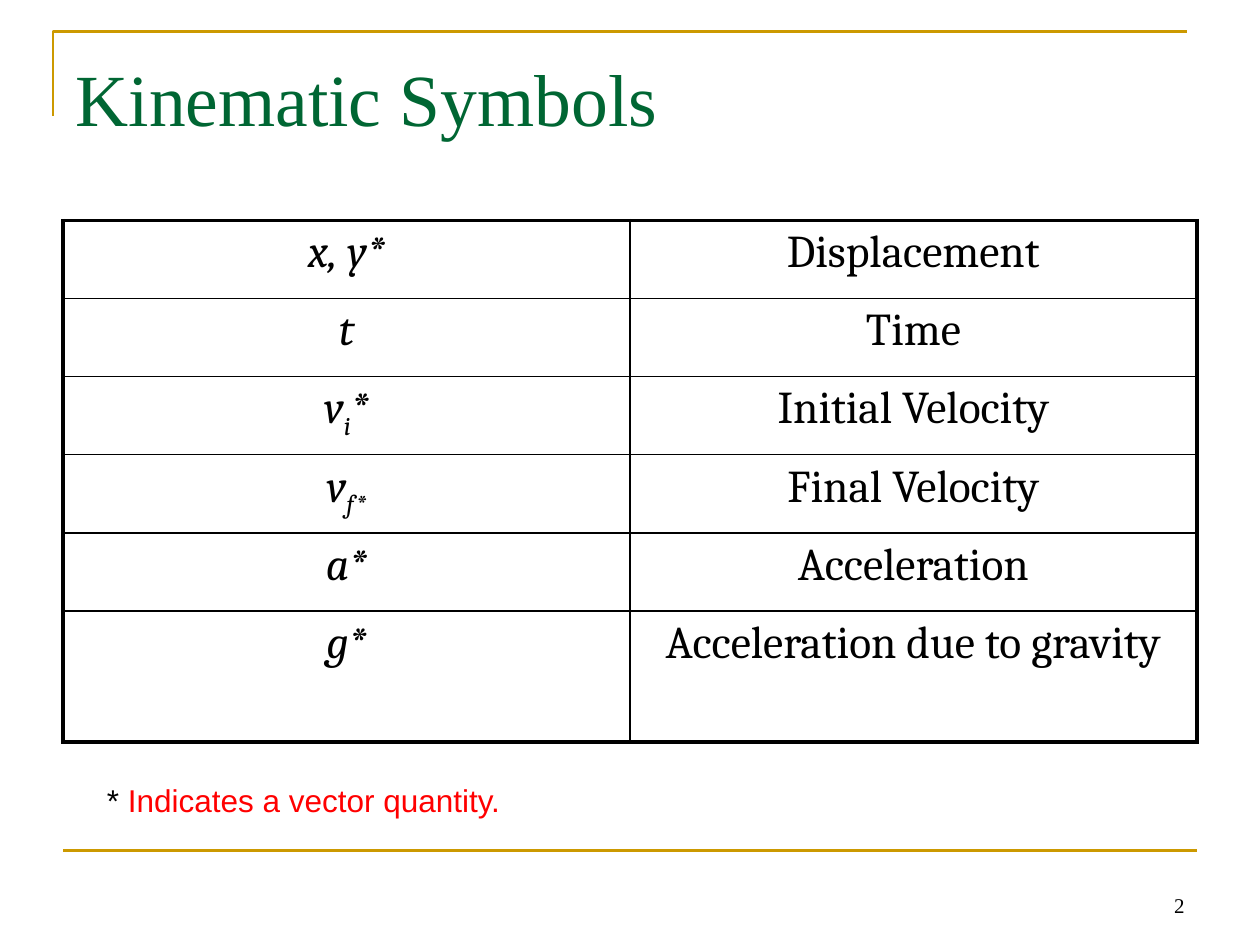
"""Build the slide of kinematic symbols."""
from dataclasses import dataclass

import pptx
import pptx.chart.data
import pptx.dml.color
import pptx.enum.shapes
import pptx.enum.text
import pptx.oxml
import pptx.oxml.ns
import pptx.util

Inches = pptx.util.Inches
Pt = pptx.util.Pt
Align = pptx.enum.text.PP_ALIGN
Anchor = pptx.enum.text.MSO_ANCHOR


@dataclass(frozen=True)
class Theme:
    """Colours, fonts and type sizes."""
    gold: str = "CC9900"
    green: str = "006633"
    black: str = "000000"
    red: str = "FF0000"
    serif: str = "Times New Roman"
    sans: str = "Arial"
    math: str = "Cambria"
    title: float = 42
    cell: float = 26
    note: float = 18
    page: float = 12
    rule: float = 1.5
    thin: float = 1
    thick: float = 2.25


@dataclass(frozen=True)
class Part:
    """A run of text with its look."""
    text: str
    font: str
    size: float
    color: str
    slant: bool = False
    base: int = 0


@dataclass(frozen=True)
class Entry:
    """A symbol, given as text and baseline pairs, and its meaning."""
    marks: tuple[tuple[str, int], ...]
    name: str
    height: float = 0.62


THEME = Theme()
ROWS = (
    Entry((("x, y*", 0),), "Displacement"),
    Entry((("t", 0),), "Time"),
    Entry((("v", 0), ("i", -25), ("*", 0)), "Initial Velocity"),
    Entry((("v", 0), ("f*", -25)), "Final Velocity"),
    Entry((("a*", 0),), "Acceleration"),
    Entry((("g*", 0),), "Acceleration due to gravity", 1.04),
)


def paint(color: str) -> pptx.dml.color.RGBColor:
    """Turn a hex string into a colour."""
    return pptx.dml.color.RGBColor.from_string(color)


def write(para, parts: list[Part], align=Align.LEFT) -> None:
    """Add the parts to a paragraph as runs."""
    para.alignment = align
    for part in parts:
        run = para.add_run()
        run.text = part.text
        font = run.font
        font.name = part.font
        font.size = Pt(part.size)
        font.italic = part.slant
        font.color.rgb = paint(part.color)
        if part.base:
            font._element.set("baseline", str(part.base * 1000))


def space(para, share: int) -> None:
    """Set the space before a paragraph as a percentage."""
    props = para._p.get_or_add_pPr()
    props.insert(0, pptx.oxml.parse_xml(
        f'<a:spcBef {pptx.oxml.ns.nsdecls("a")}>'
        f'<a:spcPct val="{share * 1000}"/></a:spcBef>'))


def edge(cell, sides: dict[str, float]) -> None:
    """Draw the borders of a cell, given in schema order."""
    props = cell._tc.get_or_add_tcPr()
    for spot, (side, width) in enumerate(sides.items()):
        props.insert(spot, pptx.oxml.parse_xml(
            f'<a:ln{side} {pptx.oxml.ns.nsdecls("a")} w="{Pt(width)}">'
            f'<a:solidFill><a:srgbClr val="{THEME.black}"/></a:solidFill>'
            f'</a:ln{side}>'))


def label(slide, box: tuple[float, ...], parts: list[Part],
          align=Align.LEFT, anchor=Anchor.TOP) -> None:
    """Add a text box."""
    frame = slide.shapes.add_textbox(*map(Inches, box)).text_frame
    frame.word_wrap = True
    frame.vertical_anchor = anchor
    write(frame.paragraphs[0], parts, align)


def stroke(line) -> None:
    """Give a line the look of the gold rules."""
    line.color.rgb = paint(THEME.gold)
    line.width = Pt(THEME.rule)


def frame(slide) -> None:
    """Draw the gold corner and the gold foot rule."""
    build = slide.shapes.build_freeform(
        Inches(0.42), Inches(0.92))
    build.add_line_segments(
        [(Inches(0.42), Inches(0.25)), (Inches(9.42), Inches(0.25))],
        close=False)
    corner = build.convert_to_shape()
    corner.shadow.inherit = False
    corner.fill.background()
    stroke(corner.line)
    foot = slide.shapes.add_connector(
        pptx.enum.shapes.MSO_CONNECTOR.STRAIGHT,
        Inches(0.5), Inches(6.75), Inches(9.5), Inches(6.75))
    stroke(foot.line)
    foot._element.spPr.append(
        pptx.oxml.parse_xml(f'<a:effectLst {pptx.oxml.ns.nsdecls("a")}/>'))


def head(slide, text: str) -> None:
    """Place and fill the title."""
    title = slide.shapes.title
    title.left, title.top = Inches(0.5), Inches(0.3)
    title.width, title.height = Inches(9), Inches(1.25)
    body = title.text_frame
    body.vertical_anchor = Anchor.TOP
    body.margin_top = Inches(0.12)
    write(body.paragraphs[0],
          [Part(text, THEME.serif, THEME.title, THEME.green)])


def chart(slide, rows: tuple[Entry, ...]) -> None:
    """Add the table of symbols and meanings."""
    high = sum(row.height for row in rows)
    table = slide.shapes.add_table(
        len(rows), 2, Inches(0.5), Inches(1.75),
        Inches(9), Inches(high)).table
    table.first_row = table.horz_banding = False
    last = len(rows) - 1
    for y, row in enumerate(rows):
        table.rows[y].height = Inches(row.height)
        look = (THEME.math, THEME.cell, THEME.black)
        pair = ([Part(text, *look, True, base) for text, base in row.marks],
                [Part(row.name, *look)])
        for x, parts in enumerate(pair):
            cell = table.cell(y, x)
            cell.fill.background()
            outer = {"L": x == 0, "R": x == 1, "T": y == 0, "B": y == last}
            edge(cell, {side: THEME.thick if out else THEME.thin
                        for side, out in outer.items()})
            para = cell.text_frame.paragraphs[0]
            write(para, parts, Align.CENTER)
            space(para, 20)


def main() -> None:
    """Build and save the deck."""
    deck = pptx.Presentation()
    deck.slide_width, deck.slide_height = Inches(10), Inches(7.5)
    slide = deck.slides.add_slide(deck.slide_layouts[5])
    frame(slide)
    head(slide, "Kinematic Symbols")
    chart(slide, ROWS)
    label(slide, (7.17, 6.83, 2.33, 0.5),
          [Part("2", THEME.serif, THEME.page, THEME.black)],
          Align.RIGHT, Anchor.BOTTOM)
    label(slide, (0.75, 6.15, 4.33, 0.4),
          [Part("*", THEME.sans, THEME.note, THEME.black),
           Part(" Indicates a vector quantity.",
                THEME.sans, THEME.note, THEME.red)])
    deck.save("out.pptx")


if __name__ == "__main__":
    main()
